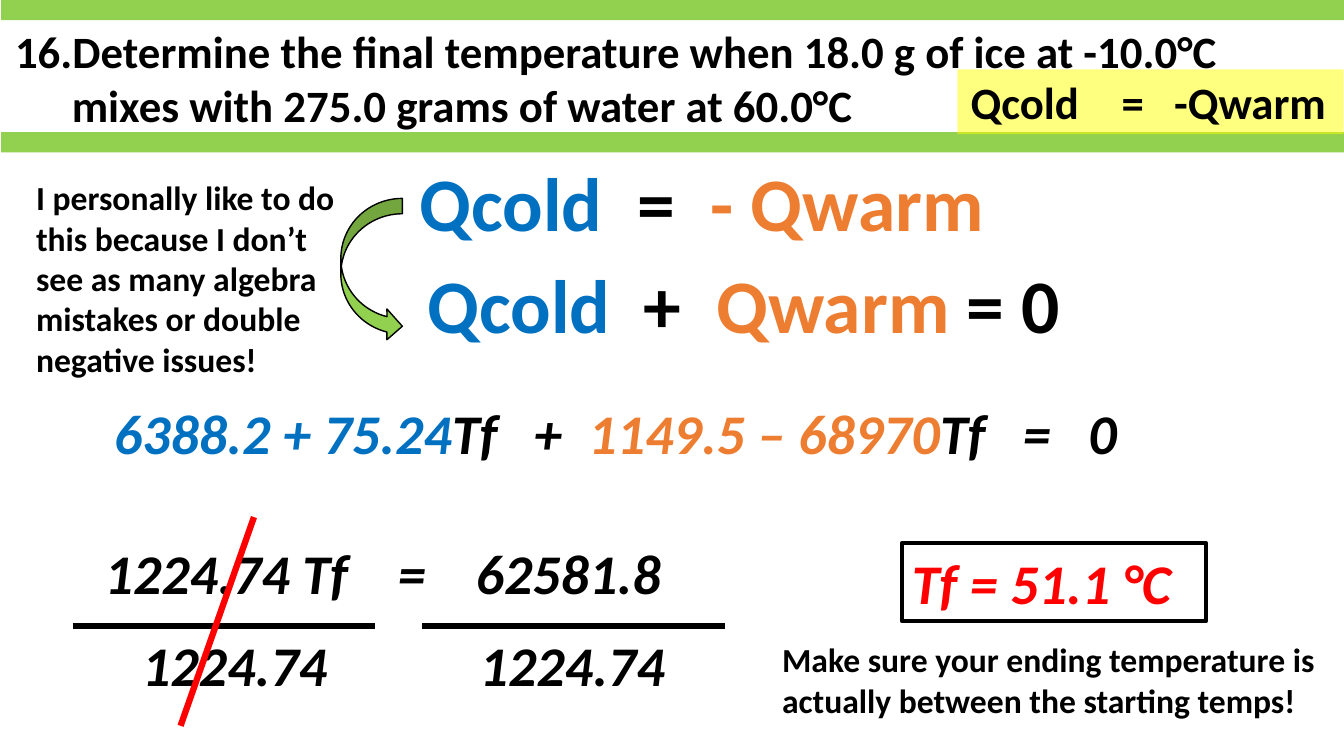
from dataclasses import dataclass

from lxml import etree
from pptx import Presentation
from pptx import util as u
from pptx.dml import color
from pptx.enum import dml, shapes, text
from pptx.oxml import ns


@dataclass(frozen=True)
class Theme:
    font: str = "Calibri"
    ink: str = "000000"
    cold: str = "0070C0"
    warm: str = "ED7D31"
    alert: str = "FF0000"
    green: str = "92D050"
    yellow: str = "FFFF00"
    note: int = 24
    question: int = 32
    working: int = 40
    formula: int = 54


THEME = Theme()


def rgb(value):
    return color.RGBColor.from_string(value)


def add_xml(parent, tag, **attributes):
    child = etree.SubElement(parent, ns.qn(tag))
    for name, value in attributes.items():
        child.set(name, str(value))
    return child


class Board:
    """Holds the theme and the slide being filled; lengths are in cm."""

    def __init__(self, slide, theme):
        self.slide = slide
        self.theme = theme

    def fill_text(self, shape, parts, size, italic=False, tabs=(), inset=0.25):
        """Fill a shape with one paragraph; parts are (text, colour) pairs."""
        frame = shape.text_frame
        frame_format = {
            "word_wrap": True,
            "auto_size": text.MSO_AUTO_SIZE.NONE,
            "vertical_anchor": text.MSO_ANCHOR.TOP,
            "margin_left": u.Cm(inset),
        }
        for name, value in frame_format.items():
            setattr(frame, name, value)
        paragraph = frame.paragraphs[0]
        paragraph.alignment = text.PP_ALIGN.LEFT
        paragraph.line_spacing = 1.0
        for words, ink in parts:
            run = paragraph.add_run()
            run.text = words
            run_format = {"name": self.theme.font, "size": u.Pt(size),
                          "bold": True, "italic": italic}
            for name, value in run_format.items():
                setattr(run.font, name, value)
            run.font.color.rgb = rgb(ink)
        if tabs:
            stops = add_xml(paragraph._p.get_or_add_pPr(), "a:tabLst")
            for stop in tabs:
                add_xml(stops, "a:tab", pos=u.Cm(stop), algn="l")
        return paragraph

    def question(self, box, words, number, indent):
        title = self.slide.shapes.title
        for name, value in zip(("left", "top", "width", "height"), box):
            setattr(title, name, u.Cm(value))
        paragraph = self.fill_text(title, [(words, self.theme.ink)], self.theme.question)
        properties = paragraph._p.get_or_add_pPr()
        properties.set("marL", str(u.Cm(indent)))
        properties.set("indent", str(-u.Cm(indent)))
        add_xml(properties, "a:buFont", typeface="+mj-lt")
        add_xml(properties, "a:buAutoNum", type="arabicPeriod", startAt=number)

    def label(self, box, parts, size, **style):
        return self.fill_text(self.slide.shapes.add_textbox(*map(u.Cm, box)),
                              parts, size, **style)

    def shape(self, box, fill=None, outline=None, weight=1, alpha=None,
              kind=shapes.MSO_SHAPE.RECTANGLE):
        shape = self.slide.shapes.add_shape(kind, *map(u.Cm, box))
        shape.shadow.inherit = False
        if fill:
            shape.fill.solid()
            shape.fill.fore_color.rgb = rgb(fill)
        else:
            shape.fill.background()
        if alpha:
            tint = shape._element.spPr.find(ns.qn("a:solidFill")).find(ns.qn("a:srgbClr"))
            add_xml(tint, "a:alpha", val=alpha * 1000)
        if outline:
            shape.line.color.rgb = rgb(outline)
            shape.line.width = u.Pt(weight)
        else:
            shape.line.fill.background()
        return shape

    def line(self, start, end, ink, weight=4.5):
        line = self.slide.shapes.add_connector(
            shapes.MSO_CONNECTOR.STRAIGHT, *map(u.Cm, (*start, *end)))
        line.line.color.rgb = rgb(ink)
        line.line.width = u.Pt(weight)
        line.line.dash_style = dml.MSO_LINE.SOLID
        add_xml(line._element.spPr, "a:effectLst")


def draw_question(board):
    t = board.theme
    for bar_top in (0, 3.33):
        board.shape((0.03, bar_top, 33.86, 0.51), fill=t.green)
    board.question(
        (0.13, 0.48, 33.35, 3),
        "Determine the final temperature when 18.0 g of ice at -10.0°C "
        "mixes with 275.0 grams of water at 60.0°C",
        number=16, indent=1.43)
    balance = board.shape((24.13, 1.75, 9.73, 1.63), fill=t.yellow, alpha=50)
    board.fill_text(balance, [("Qcold\t=\t-Qwarm", t.ink)], t.question,
                    tabs=(3.81, 5.13), inset=0.33)


def draw_formulas(board):
    t = board.theme
    board.label((6.4, 3.81, 22.58, 2.57),
                [("Qcold", t.cold), ("\t=\t", t.ink), ("- Qwarm", t.warm)],
                t.formula, tabs=(5.49, 7.34), inset=4.17)
    board.label((7.11, 6.38, 23.37, 2.57),
                [("Qcold", t.cold), ("\t+\t", t.ink), ("Qwarm ", t.warm), ("= 0", t.ink)],
                t.formula, tabs=(5.44, 7.29), inset=3.66)
    board.label((0.66, 4.34, 8.38, 5.38),
                [("I personally like to do this because I don’t see as many "
                  "algebra mistakes or double negative issues!", t.ink)], t.note)
    board.shape((8.59, 5, 1.55, 3.61), fill=t.green, outline=t.ink,
                kind=shapes.MSO_SHAPE.CURVED_RIGHT_ARROW)


def draw_working(board):
    t = board.theme
    fraction_bar = 15.77
    rows = [
        ((2.62, 9.93, 13.49), [("6388.2 + 75.24", t.cold), ("Tf\t+", t.ink)], (10.59,)),
        ((14.58, 9.93, 16.89), [("1149.5 – 68970", t.warm), ("Tf\t=\t0", t.ink)],
         (10.95, 12.6)),
        ((2.39, 13.44, 19.18), [("1224.74 Tf\t=\t62581.8", t.ink)], (7.39, 9.35)),
        ((3.33, fraction_bar, 14.63), [("1224.74\t1224.74", t.ink)], (8.51,)),
    ]
    for place, parts, tabs in rows:
        board.label((*place, 1.96), parts, t.working, italic=True, tabs=tabs)
    for left in (1.83, 10.64):
        board.line((left, fraction_bar), (left + 7.62, fraction_bar), t.ink)
    board.line((6.4, 13.03), (4.55, 18.29), t.alert)


def draw_answer(board):
    t = board.theme
    answer = board.shape((22.73, 13.69, 7.67, 1.96), outline=t.ink, weight=3)
    board.fill_text(answer, [("Tf = 51.1 °C", t.alert)], t.working, italic=True)
    board.label((19.46, 15.98, 14.2, 2.31),
                [("Make sure your ending temperature is actually between "
                  "the starting temps!", t.ink)], t.note)


def main():
    deck = Presentation()
    deck.slide_width, deck.slide_height = u.Cm(33.87), u.Cm(19.05)
    title_only = deck.slide_layouts[5]
    board = Board(deck.slides.add_slide(title_only), THEME)
    for draw in (draw_question, draw_formulas, draw_working, draw_answer):
        draw(board)
    deck.save("out.pptx")


if __name__ == "__main__":
    main()
